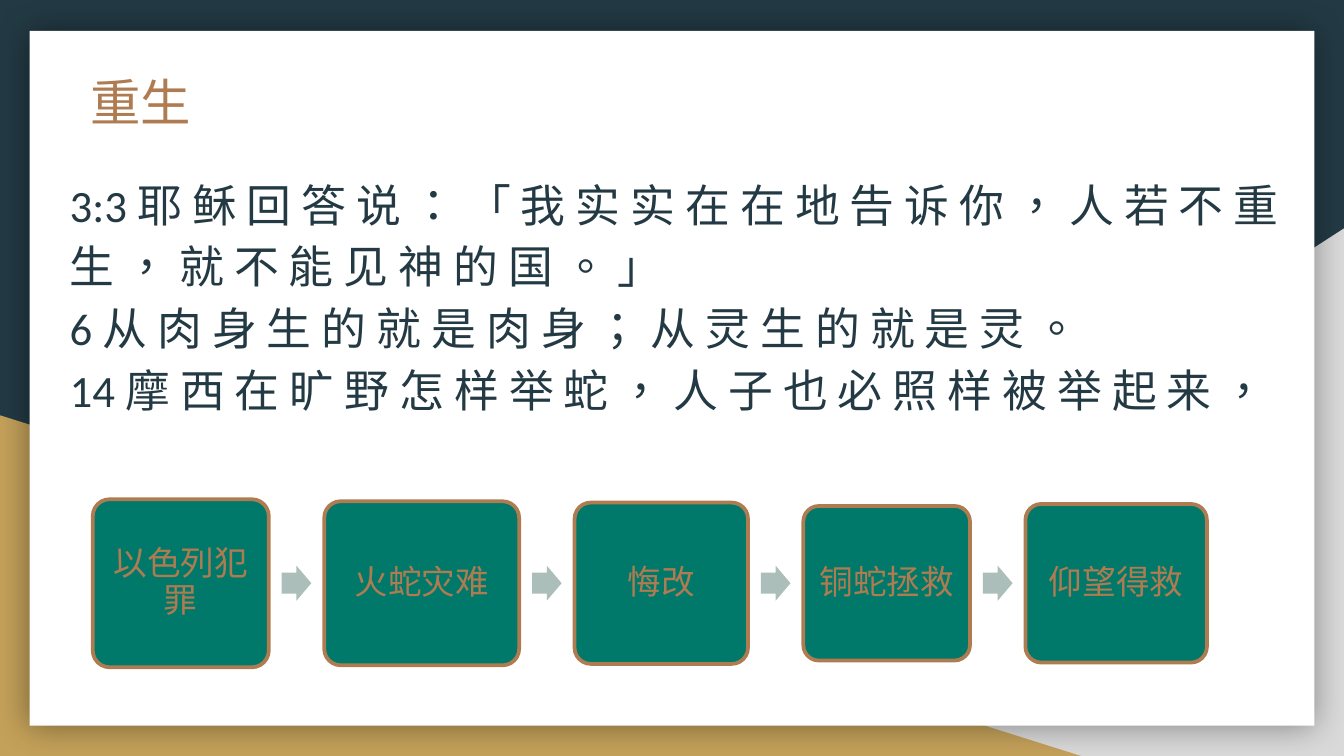
from typing import NamedTuple

import lxml.etree
import pptx
import pptx.dml.color
import pptx.enum.shapes
import pptx.enum.text
import pptx.oxml.ns
import pptx.shapes.autoshape
import pptx.slide
import pptx.text.text
import pptx.util

COLORS = {
    "navy": "233A44",
    "gray": "D9D9D9",
    "gold": "C4A15A",
    "white": "FFFFFF",
    "copper": "AF7B51",
    "green": "00796B",
    "sage": "ABBEBA",
    "black": "000000",
}
Inches = pptx.util.Inches
Kind = pptx.enum.shapes.MSO_SHAPE


class Area(NamedTuple):
    left: float
    top: float
    width: float
    height: float


class Step(NamedTuple):
    label: str
    width: float
    height: float


STEPS = [
    Step("以色列犯罪", 1.31, 1.25),
    Step("火蛇灾难", 1.45, 1.22),
    Step("悔改", 1.29, 1.2),
    Step("铜蛇拯救", 1.24, 1.15),
    Step("仰望得救", 1.35, 1.18),
]
SLIDE_WIDTH = 10
SLIDE_HEIGHT = SLIDE_WIDTH * 9 / 16
FLOW_LEFT, FLOW_RIGHT, FLOW_MIDDLE = 0.69, 8.98, 4.34
STEP_GAP = (FLOW_RIGHT - FLOW_LEFT - sum(step.width for step in STEPS)) / (len(STEPS) - 1)
ARROW_WIDTH, ARROW_HEIGHT = 0.22, 0.26
VERSES = [
    "3:3 耶 稣 回 答 说 ： 「 我 实 实 在 在 地 告 诉 你 ， 人 若 不 重 生 ， 就 不 能 见 神 的 国 。 」",
    "6 从 肉 身 生 的 就 是 肉 身 ； 从 灵 生 的 就 是 灵 。",
    "14 摩 西 在 旷 野 怎 样 举 蛇 ， 人 子 也 必 照 样 被 举 起 来 ，",
]


def rgb(name: str) -> pptx.dml.color.RGBColor:
    return pptx.dml.color.RGBColor.from_string(COLORS[name])


def add_filled(slide: pptx.slide.Slide, kind: Kind, area: Area, color: str) -> pptx.shapes.autoshape.Shape:
    shape = slide.shapes.add_shape(kind, *map(Inches, area))
    shape.shadow.inherit = False
    shape.fill.solid()
    shape.fill.fore_color.rgb = rgb(color)
    shape.line.fill.background()
    return shape


def add_run(paragraph: pptx.text.text._Paragraph, text: str, size: float, font: str, color: str) -> None:
    run = paragraph.add_run()
    run.text = text
    run.font.size = pptx.util.Pt(size)
    run.font.name = font
    run.font.color.rgb = rgb(color)
    run._r.get_or_add_rPr().set("lang", "zh-TW")


def set_frame(frame: pptx.text.text.TextFrame, inset: float, anchor: pptx.enum.text.MSO_ANCHOR) -> None:
    frame.word_wrap = True
    frame.auto_size = pptx.enum.text.MSO_AUTO_SIZE.NONE
    frame.vertical_anchor = anchor
    frame.margin_left = frame.margin_right = Inches(inset)
    frame.margin_top = frame.margin_bottom = Inches(inset)


def add_glow(shape: pptx.shapes.autoshape.Shape, blur: float, opacity: int) -> None:
    effects = shape._element.spPr.find(pptx.oxml.ns.qn("a:effectLst"))
    shadow = lxml.etree.SubElement(
        effects, pptx.oxml.ns.qn("a:outerShdw"), blurRad=str(pptx.util.Pt(blur)), dist="0", dir="0"
    )
    color = lxml.etree.SubElement(shadow, pptx.oxml.ns.qn("a:srgbClr"), val=COLORS["black"])
    lxml.etree.SubElement(color, pptx.oxml.ns.qn("a:alpha"), val=str(opacity * 1000))


def add_backdrop(slide: pptx.slide.Slide) -> None:
    slide.background.fill.solid()
    slide.background.fill.fore_color.rgb = rgb("navy")
    gray_corner = add_filled(slide, Kind.RIGHT_TRIANGLE, Area(3.92, 1.7, 6.08, 3.93), "gray")
    gray_corner._element.spPr.xfrm.set("flipH", "1")
    add_filled(slide, Kind.RIGHT_TRIANGLE, Area(0, 3.09, 8.06, 2.54), "gold")
    panel = add_filled(slide, Kind.RECTANGLE, Area(0.22, 0.23, 9.56, 5.17), "white")
    add_glow(panel, 18, 40)


def add_title(slide: pptx.slide.Slide, text: str) -> None:
    title = slide.shapes.title
    slide.shapes._spTree.append(title._element)
    title.left, title.top, title.width, title.height = map(Inches, Area(0.57, 0.43, 8.21, 1.04))
    set_frame(title.text_frame, 0.1, pptx.enum.text.MSO_ANCHOR.TOP)
    paragraph = title.text_frame.paragraphs[0]
    paragraph.alignment = pptx.enum.text.PP_ALIGN.LEFT
    add_run(paragraph, text, 27, "League Spartan", "copper")


def add_verses(slide: pptx.slide.Slide) -> None:
    frame = slide.shapes.add_textbox(*map(Inches, Area(0.25, 1.16, 9.49, 3.51))).text_frame
    set_frame(frame, 0.1, pptx.enum.text.MSO_ANCHOR.TOP)
    for index, verse in enumerate(VERSES):
        paragraph = frame.add_paragraph() if index else frame.paragraphs[0]
        paragraph.line_spacing = 1.15
        paragraph._p.get_or_add_pPr().set("marL", str(Inches(0.17)))
        add_run(paragraph, verse, 24, "Calibri", "navy")


def add_step(slide: pptx.slide.Slide, step: Step, left: float) -> None:
    area = Area(left, FLOW_MIDDLE - step.height / 2, step.width, step.height)
    box = add_filled(slide, Kind.ROUNDED_RECTANGLE, area, "green")
    box.adjustments[0] = 0.1
    box.line.color.rgb = rgb("copper")
    box.line.width = pptx.util.Pt(2)
    set_frame(box.text_frame, 0.07, pptx.enum.text.MSO_ANCHOR.MIDDLE)
    paragraph = box.text_frame.paragraphs[0]
    paragraph.alignment = pptx.enum.text.PP_ALIGN.CENTER
    paragraph.line_spacing = 0.9
    add_run(paragraph, step.label, 18, "Arial", "copper")


def add_flow(slide: pptx.slide.Slide) -> None:
    left = FLOW_LEFT
    for index, step in enumerate(STEPS):
        if index:
            arrow_left = left - (STEP_GAP + ARROW_WIDTH) / 2
            area = Area(arrow_left, FLOW_MIDDLE - ARROW_HEIGHT / 2, ARROW_WIDTH, ARROW_HEIGHT)
            arrow = add_filled(slide, Kind.RIGHT_ARROW, area, "sage")
            arrow.adjustments[0] = 0.6
        add_step(slide, step, left)
        left += step.width + STEP_GAP


def main() -> None:
    deck = pptx.Presentation()
    deck.slide_width, deck.slide_height = Inches(SLIDE_WIDTH), Inches(SLIDE_HEIGHT)
    slide = deck.slides.add_slide(deck.slide_layouts[5])
    add_backdrop(slide)
    add_title(slide, "重生")
    add_verses(slide)
    add_flow(slide)
    deck.save("out.pptx")


if __name__ == "__main__":
    main()
